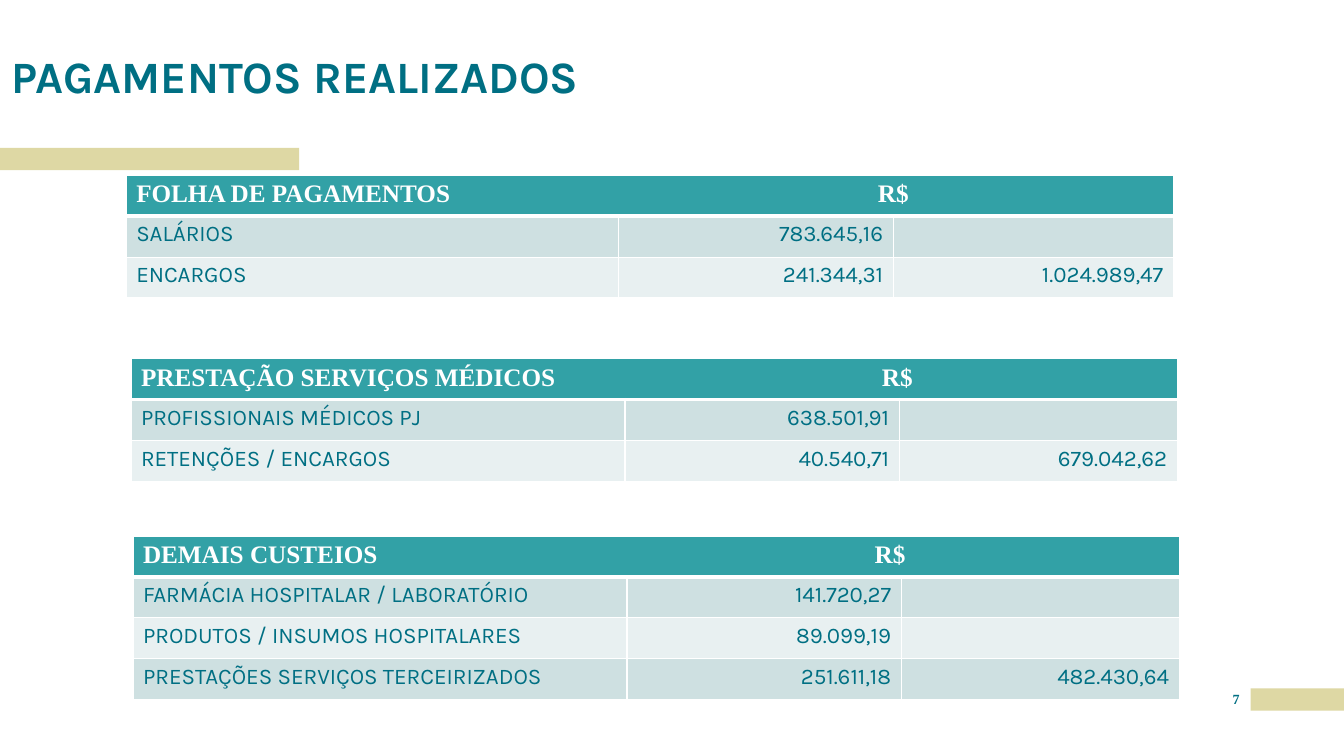
from lxml.etree import SubElement
from pptx import Presentation
from pptx.dml.color import RGBColor
from pptx.enum.shapes import MSO_SHAPE as Shape
from pptx.enum.text import MSO_ANCHOR as Anchor, PP_ALIGN as Align
from pptx.oxml.ns import qn
from pptx.util import Cm, Pt

TITLE = "PAGAMENTOS REALIZADOS"
PAGE_NUMBER = "7"
CURRENCY = "R$"
PAYMENTS = [
    {"heading": "FOLHA DE PAGAMENTOS", "left": 3.18, "top": 4.42,
     "widths": (12.4, 6.93, 7.06), "currency_at": 18.69,
     "items": [("SALÁRIOS", "783.645,16", ""),
               ("ENCARGOS", "241.344,31", "1.024.989,47")]},
    {"heading": "PRESTAÇÃO SERVIÇOS MÉDICOS", "left": 3.3, "top": 9.04,
     "widths": (12.45, 6.91, 7.01), "currency_at": 18.67,
     "items": [("PROFISSIONAIS MÉDICOS PJ", "638.501,91", ""),
               ("RETENÇÕES / ENCARGOS", "40.540,71", "679.042,62")]},
    {"heading": "DEMAIS CUSTEIOS", "left": 3.35, "top": 13.51,
     "widths": (12.45, 6.91, 7.01), "currency_at": 18.44,
     "items": [("FARMÁCIA HOSPITALAR / LABORATÓRIO", "141.720,27", ""),
               ("PRODUTOS / INSUMOS HOSPITALARES", "89.099,19", ""),
               ("PRESTAÇÕES SERVIÇOS TERCEIRIZADOS", "251.611,18", "482.430,64")]},
]
ACCENT_BARS = [(31.52, 17.35, 2.35, 0.56), (0, 3.73, 7.54, 0.56)]
ROW_HEIGHT = 1.03

WHITE = RGBColor(0xFF, 0xFF, 0xFF)
PETROL = RGBColor(0x00, 0x6F, 0x83)
TEAL = RGBColor(0x32, 0xA1, 0xA6)
SAND = RGBColor(0xDE, 0xD8, 0xA4)
BANDS = (RGBColor(0xCE, 0xE0, 0xE1), RGBColor(0xE8, 0xF0, 0xF1))
SANS = "Karla"
SERIF = "Times New Roman"


def write(paragraph, text, font, size, color, bold):
    run = paragraph.add_run()
    run.text = text
    run.font.name = font
    run.font.size = Pt(size)
    run.font.color.rgb = color
    run.font.bold = bold


def clear_margins(frame):
    frame.margin_left = frame.margin_right = 0
    frame.margin_top = frame.margin_bottom = 0


def style_cell(cell, fill, bottom_width):
    properties = cell._tc.get_or_add_tcPr()
    for side, width in (("L", 1), ("R", 1), ("T", 1), ("B", bottom_width)):
        border = SubElement(properties, qn(f"a:ln{side}"), w=str(Pt(width)))
        solid = SubElement(border, qn("a:solidFill"))
        SubElement(solid, qn("a:srgbClr"), val=str(WHITE))
    cell.fill.solid()
    cell.fill.fore_color.rgb = fill


def add_payment_table(slide, payment):
    items, widths = payment["items"], payment["widths"]
    row_count = len(items) + 1
    table = slide.shapes.add_table(
        row_count, len(widths), Cm(payment["left"]), Cm(payment["top"]),
        Cm(sum(widths)), Cm(ROW_HEIGHT * row_count)).table
    for column, width in zip(table.columns, widths):
        column.width = Cm(width)
    for row in table.rows:
        row.height = Cm(ROW_HEIGHT)

    for cell in table.rows[0].cells:
        style_cell(cell, TEAL, 3)
    header = table.cell(0, 0)
    header.merge(table.cell(0, len(widths) - 1))
    heading = header.text_frame.paragraphs[0]
    tabs = SubElement(heading._p.get_or_add_pPr(), qn("a:tabLst"))
    SubElement(tabs, qn("a:tab"), pos=str(Cm(payment["currency_at"])), algn="l")
    write(heading, f"{payment['heading']}\t{CURRENCY}", SERIF, 18, WHITE, True)

    for row_index, item in enumerate(items):
        for column_index, value in enumerate(item):
            cell = table.cell(row_index + 1, column_index)
            style_cell(cell, BANDS[row_index % 2], 1)
            entry = cell.text_frame.paragraphs[0]
            if column_index:
                entry.alignment = Align.RIGHT
            if value:
                write(entry, value, SANS, 16, PETROL, False)


def main():
    """Build the slide of payments made, with one table per cost group."""
    deck = Presentation()
    deck.slide_width, deck.slide_height = Cm(33.87), Cm(19.05)
    slide = deck.slides.add_slide(deck.slide_layouts[5])

    for bounds in ACCENT_BARS:
        bar = slide.shapes.add_shape(Shape.RECTANGLE, *map(Cm, bounds))
        bar.shadow.inherit = False
        bar.fill.solid()
        bar.fill.fore_color.rgb = SAND
        bar.line.fill.background()

    title = slide.shapes.title
    title.left, title.top, title.width, title.height = map(Cm, (0.28, 0, 23.72, 2.59))
    clear_margins(title.text_frame)
    title.text_frame.vertical_anchor = Anchor.BOTTOM
    title_line = title.text_frame.paragraphs[0]
    title_line.alignment = Align.LEFT
    title_line.line_spacing = 0.9
    write(title_line, TITLE, SANS, 32, PETROL, True)

    page = slide.shapes.add_textbox(*map(Cm, (30.78, 17.4, 0.74, 0.64))).text_frame
    clear_margins(page)
    page.word_wrap = True
    page.paragraphs[0].alignment = Align.CENTER
    write(page.paragraphs[0], PAGE_NUMBER, SERIF, 10, PETROL, True)

    for payment in PAYMENTS:
        add_payment_table(slide, payment)
    deck.save("out.pptx")


if __name__ == "__main__":
    main()
